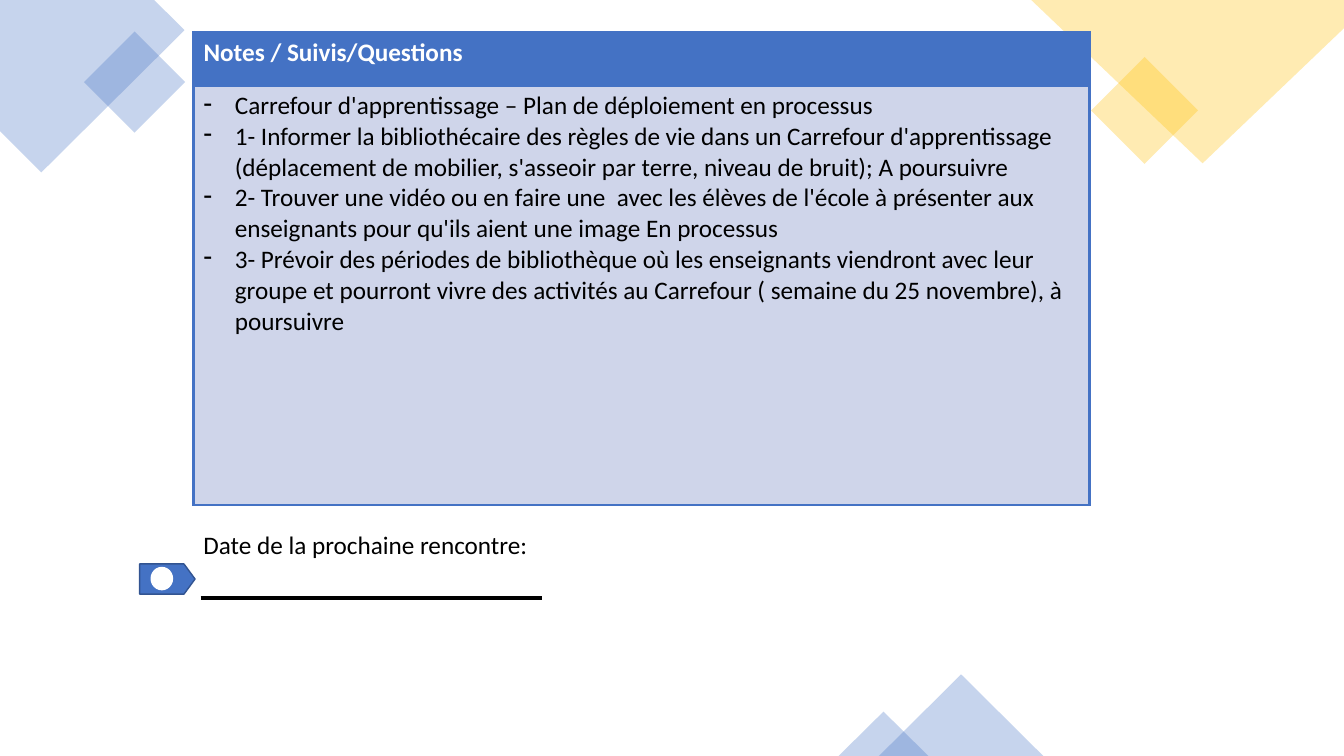
from dataclasses import dataclass

import pptx
import pptx.dml.color
import pptx.enum.shapes
import pptx.enum.text
import pptx.oxml.ns
import pptx.util
from lxml import etree

SHAPE = pptx.enum.shapes.MSO_SHAPE
BLUE, DARK_BLUE, PALE_BLUE, GOLD = "4472C4", "325491", "CFD5EA", "FFC000"
BLACK, WHITE = "000000", "FFFFFF"
SLIDE_W, SLIDE_H = pptx.util.Inches(13.333), pptx.util.Inches(7.5)
VEIL = 30  # opacity of the corner decorations, in percent
HEADER = "Notes / Suivis/Questions"
NOTES = [
    "Carrefour d'apprentissage – Plan de déploiement en processus",
    "1- Informer la bibliothécaire des règles de vie dans un Carrefour d'apprentissage "
    "(déplacement de mobilier, s'asseoir par terre, niveau de bruit); A poursuivre",
    "2- Trouver une vidéo ou en faire une  avec les élèves de l'école à présenter aux "
    "enseignants pour qu'ils aient une image En processus",
    "3- Prévoir des périodes de bibliothèque où les enseignants viendront avec leur "
    "groupe et pourront vivre des activités au Carrefour ( semaine du 25 novembre), à poursuivre",
]


@dataclass
class Box:
    """A rectangle in percent of the slide's width and height."""
    x: float
    y: float
    w: float
    h: float

    def emu(self) -> tuple:
        return across(self.x), down(self.y), across(self.w), down(self.h)


@dataclass
class Piece:
    kind: SHAPE
    box: Box
    fill: str
    opacity: int = 100
    rotation: int = 0
    line: str | None = None


@dataclass
class Corner:
    """A polygon whose points are percent of the slide's width and height."""
    points: list
    fill: str


CORNERS = [
    Corner([(11.48, 0), (0, 0), (0, 17.33), (3.08, 22.8), (13.73, 4)], BLUE),
    Corner([(100, 0), (76.73, 0), (89.48, 21.6), (100, 3.73)], GOLD),
]
DECORATIONS = [
    Piece(SHAPE.RECTANGLE, Box(7.35, 6.13, 5.33, 9.47), BLUE, VEIL, 315),
    Piece(SHAPE.RECTANGLE, Box(82.35, 9.6, 5.63, 10), GOLD, VEIL, 315),
    Piece(SHAPE.ISOSCELES_TRIANGLE, Box(65.4, 89.2, 12.23, 10.8), BLUE, VEIL),
    Piece(SHAPE.ISOSCELES_TRIANGLE, Box(62.4, 94.13, 6.68, 5.87), BLUE, VEIL),
]
DATE_MARKER = [
    Piece(SHAPE.FLOWCHART_OFFPAGE_CONNECTOR, Box(11.33, 72.93, 2.25, 7.33), BLUE,
          rotation=270, line=DARK_BLUE),
    Piece(SHAPE.OVAL, Box(11.25, 75.07, 1.58, 2.93), WHITE, line=WHITE),
]


def across(share: float) -> int:
    return round(SLIDE_W * share / 100)


def down(share: float) -> int:
    return round(SLIDE_H * share / 100)


def rgb(color: str) -> pptx.dml.color.RGBColor:
    return pptx.dml.color.RGBColor.from_string(color)


def add_xml(parent, tag: str, **attrs):
    return etree.SubElement(parent, pptx.oxml.ns.qn(tag), attrs)


def paint(sp, fill: str, opacity: int = 100, line: str | None = None) -> None:
    sp.shadow.inherit = False
    sp.fill.solid()
    sp.fill.fore_color.rgb = rgb(fill)
    if opacity < 100:
        color = sp.fill._xPr.find(".//" + pptx.oxml.ns.qn("a:srgbClr"))
        add_xml(color, "a:alpha", val=str(opacity * 1000))
    if line:
        sp.line.color.rgb = rgb(line)
        sp.line.width = pptx.util.Pt(1)
    else:
        sp.line.fill.background()


def write(p, text: str, *, size: float = 18, color: str = BLACK, bold: bool = False,
          bullet: str | None = None) -> None:
    r = p.add_run()
    r.text = text
    r.font.name = "Calibri"
    r.font.size = pptx.util.Pt(size)
    r.font.bold = bold
    r.font.color.rgb = rgb(color)
    if bullet:
        indent = pptx.util.Inches(0.31)
        pPr = p._p.get_or_add_pPr()
        pPr.set("marL", str(indent))
        pPr.set("indent", str(-indent))
        add_xml(pPr, "a:buChar", char=bullet)


def add_corner(s, corner: Corner) -> None:
    points = [(across(x), down(y)) for x, y in corner.points]
    builder = s.shapes.build_freeform(*points[0])
    builder.add_line_segments(points[1:], close=True)
    paint(builder.convert_to_shape(), corner.fill, VEIL)


def add_piece(s, piece: Piece) -> None:
    sp = s.shapes.add_shape(piece.kind, *piece.box.emu())
    sp.rotation = piece.rotation
    paint(sp, piece.fill, piece.opacity, piece.line)


def style_cell(cell, fill: str) -> None:
    tcPr = cell._tc.get_or_add_tcPr()
    for side in "LRTB":
        ln = add_xml(tcPr, f"a:ln{side}", w=str(pptx.util.Pt(2.25)))
        add_xml(add_xml(ln, "a:solidFill"), "a:srgbClr", val=BLUE)
    cell.fill.solid()
    cell.fill.fore_color.rgb = rgb(fill)


def add_notes_table(s) -> None:
    header_h, body_h = 7.07, 55.47
    box = Box(14.4, 4.27, 66.68, header_h + body_h)
    table = s.shapes.add_table(2, 1, *box.emu()).table
    for row, height, fill in zip(table.rows, (header_h, body_h), (BLUE, PALE_BLUE)):
        row.height = down(height)
        style_cell(row.cells[0], fill)
    write(table.cell(0, 0).text_frame.paragraphs[0], HEADER, color=WHITE, bold=True)
    tf = table.cell(1, 0).text_frame
    for i, note in enumerate(NOTES):
        write(tf.add_paragraph() if i else tf.paragraphs[0], note, bullet="-")


def add_next_date(s) -> None:
    tf = s.shapes.add_textbox(*Box(14.4, 69.33, 25.95, 9.47).emu()).text_frame
    tf.word_wrap = True
    write(tf.paragraphs[0], "Date de la prochaine rencontre:")
    for piece in DATE_MARKER:
        add_piece(s, piece)
    y = down(79.07)
    rule = s.shapes.add_connector(pptx.enum.shapes.MSO_CONNECTOR.STRAIGHT,
                                  across(14.93), y, across(40.35), y)
    rule.line.color.rgb = rgb(BLACK)
    rule.line.width = pptx.util.Pt(3)
    add_xml(rule._element.spPr, "a:effectLst")


def main() -> None:
    prs = pptx.Presentation()
    prs.slide_width, prs.slide_height = SLIDE_W, SLIDE_H
    s = prs.slides.add_slide(prs.slide_layouts[6])
    for corner in CORNERS:
        add_corner(s, corner)
    for piece in DECORATIONS:
        add_piece(s, piece)
    add_notes_table(s)
    add_next_date(s)
    prs.save("out.pptx")


if __name__ == "__main__":
    main()
